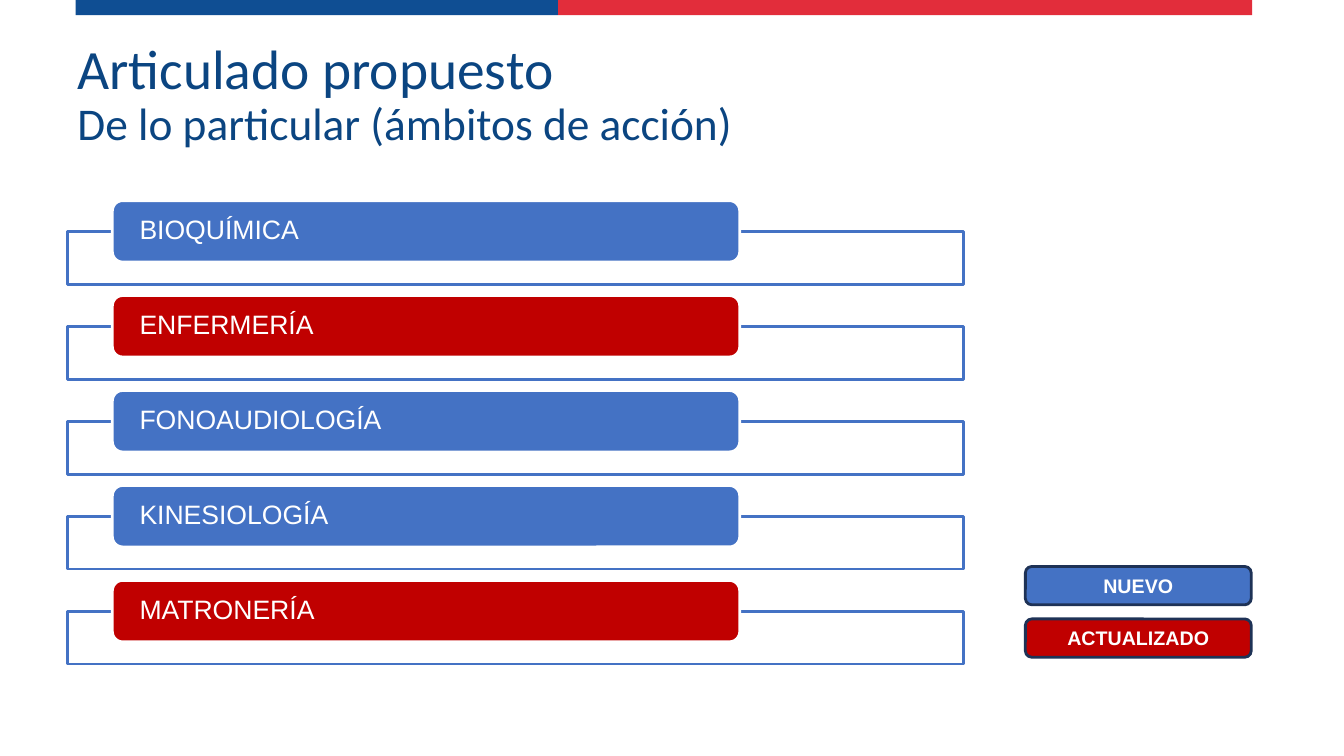
import pptx
import pptx.util
import pptx.dml.color
import pptx.enum.shapes
import pptx.enum.text

Inches = pptx.util.Inches
Pt = pptx.util.Pt
RGB = pptx.dml.color.RGBColor
KIND = pptx.enum.shapes.MSO_SHAPE
ALIGN = pptx.enum.text.PP_ALIGN
MIDDLE = pptx.enum.text.MSO_ANCHOR.MIDDLE

NAVY = RGB(0x0F, 0x4E, 0x93)
RED = RGB(0xE2, 0x2D, 0x3B)
INK = RGB(0x0B, 0x45, 0x81)
BLUE = RGB(0x44, 0x72, 0xC4)
CRIMSON = RGB(0xC0, 0x00, 0x00)
EDGE = RGB(0x1E, 0x32, 0x56)
WHITE = RGB(0xFF, 0xFF, 0xFF)

AREAS = [
    ("BIOQUÍMICA", BLUE),
    ("ENFERMERÍA", CRIMSON),
    ("FONOAUDIOLOGÍA", BLUE),
    ("KINESIOLOGÍA", BLUE),
    ("MATRONERÍA", CRIMSON),
]
KEYS = [("NUEVO", BLUE), ("ACTUALIZADO", CRIMSON)]


def add_box(slide, kind, box, fill, line=None):
    shape = slide.shapes.add_shape(kind, *map(Inches, box))
    shape.shadow.inherit = False
    shape.fill.solid()
    shape.fill.fore_color.rgb = fill
    if line is None:
        shape.line.fill.background()
    else:
        shape.line.color.rgb = line
        shape.line.width = Pt(2)
    return shape


def style(run, font, size, color, bold=False):
    run.font.name = font
    run.font.size = Pt(size)
    run.font.color.rgb = color
    run.font.bold = bold


def label(shape, text, size, align, bold=False):
    frame = shape.text_frame
    frame.text = text
    frame.word_wrap = True
    frame.vertical_anchor = MIDDLE
    para = frame.paragraphs[0]
    para.alignment = align
    style(para.runs[0], "Arial", size, WHITE, bold)
    return frame


def add_band(slide, box):
    left, top, width, height = box
    split = width * 0.41
    add_box(slide, KIND.RECTANGLE, (left, top, split, height), NAVY)
    add_box(slide, KIND.RECTANGLE, (left + split, top, width - split, height), RED)


def add_title(slide, box):
    frame = slide.shapes.add_textbox(*map(Inches, box)).text_frame
    frame.word_wrap = True
    frame.vertical_anchor = MIDDLE
    para = frame.paragraphs[0]
    para.text = "Articulado propuesto\vDe lo particular (ámbitos de acción)"
    para.line_spacing = 0.9
    for run, size in zip(para.runs, (39.6, 32.4)):
        style(run, "Calibri", size, INK)


def add_list(slide, box):
    left, top, width, height = box
    pitch = height / len(AREAS)
    for row, (name, fill) in enumerate(AREAS):
        y = top + row * pitch
        add_box(slide, KIND.RECTANGLE, (left, y + 0.31, width, 0.52), WHITE, BLUE)
        tab = add_box(slide, KIND.ROUNDED_RECTANGLE,
                      (left + width * 0.05, y, width * 0.7, 0.61), fill, WHITE)
        frame = label(tab, name, 19, ALIGN.LEFT)
        frame.margin_left = frame.margin_right = Inches(0.24)
        frame.margin_top = frame.margin_bottom = 0
        frame.paragraphs[0].line_spacing = 0.9


def add_legend(slide, box):
    left, top, width, height = box
    gap = 0.14
    deep = (height - gap) / len(KEYS)
    for row, (name, fill) in enumerate(KEYS):
        key = add_box(slide, KIND.ROUNDED_RECTANGLE,
                      (left, top + row * (deep + gap), width, deep), fill, EDGE)
        label(key, name, 14, ALIGN.CENTER, True)


def main():
    deck = pptx.Presentation()
    deck.slide_width = Inches(13.33)
    deck.slide_height = Inches(7.5)
    slide = deck.slides.add_slide(deck.slide_layouts[6])
    add_band(slide, (0.75, 0, 11.67, 0.15))
    add_title(slide, (0.67, 0.65, 9.39, 0.6))
    add_list(slide, (0.67, 1.99, 8.89, 4.71))
    add_legend(slide, (10.17, 5.62, 2.24, 0.9))
    deck.save("out.pptx")


if __name__ == "__main__":
    main()
